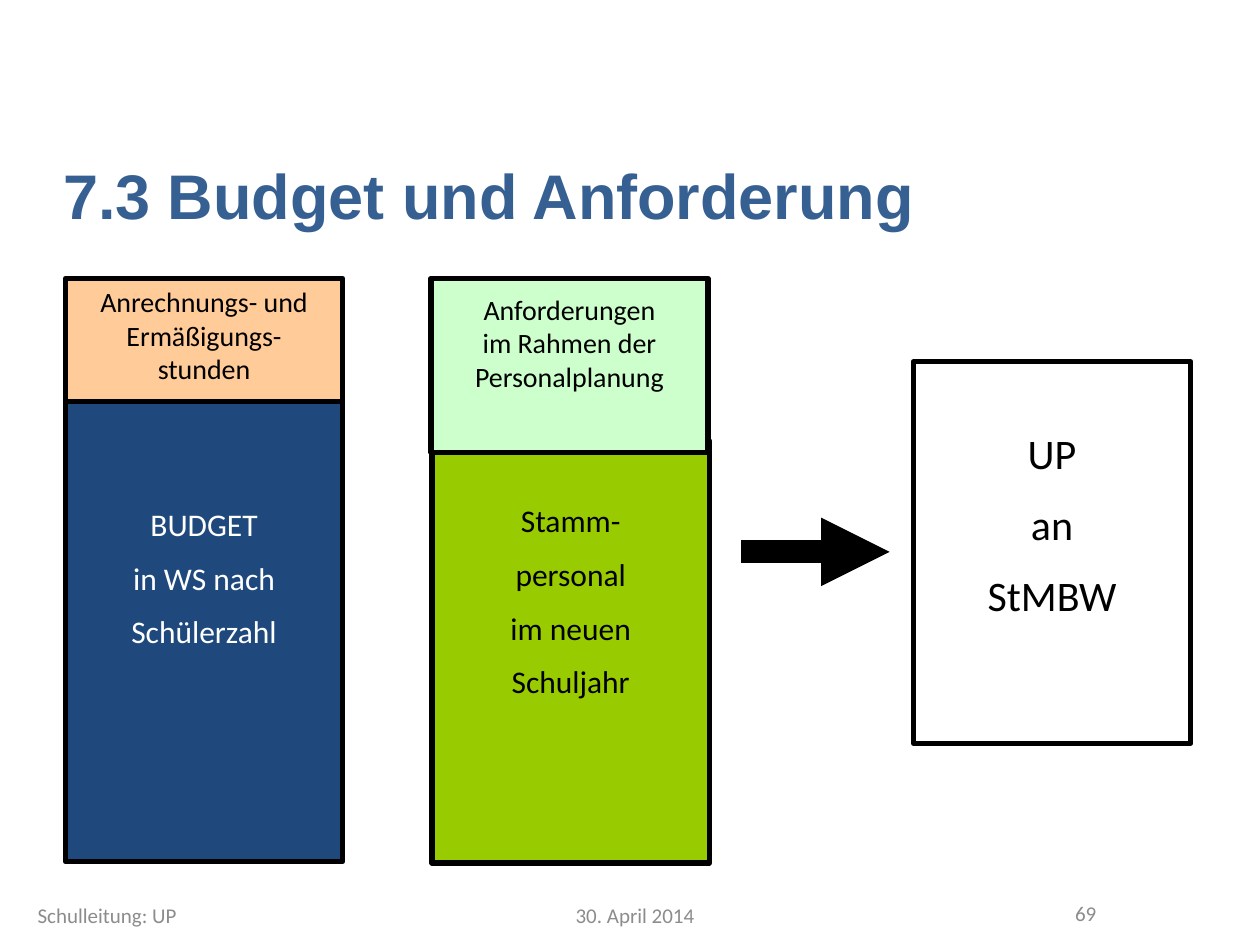
"""Build the slide on budget and staffing requests."""
from dataclasses import dataclass

from lxml import etree
from pptx import Presentation, util as u
from pptx.dml.color import RGBColor
from pptx.enum import shapes, text
from pptx.oxml.ns import qn

COLUMNS, ROWS = 100, 75
SLIDE_WIDTH, SLIDE_HEIGHT = u.Inches(10), u.Inches(7.5)
BLACK, WHITE, GREY, TITLE_BLUE = "000000", "FFFFFF", "8C8C8C", "376092"
BOX_WIDTH = 22


@dataclass
class Area:
    """A place on the slide in grid columns and rows."""
    column: float
    row: float
    width: float
    height: float


@dataclass
class Box:
    """A bordered block with centred lines."""
    area: Area
    fill: str
    lines: list[str]
    size: int
    top_inset: float
    space_before: int = 0
    color: str = BLACK


@dataclass
class Label:
    """One line of the footer."""
    area: Area
    wording: str
    alignment: text.PP_ALIGN


BOXES = [
    Box(Area(5.2, 31, BOX_WIDTH, 37.4), "1F497D",
        ["BUDGET", "in WS nach", "Schülerzahl"], 18, 0.91, 9, WHITE),
    Box(Area(5.2, 22.1, BOX_WIDTH, 9.8), "FFCC99",
        ["Anrechnungs- und", "Ermäßigungs-", "stunden"], 16, 0.05),
    Box(Area(34.3, 35, BOX_WIDTH, 33.5), "99CC00",
        ["Stamm-", "personal", "im neuen", "Schuljahr"], 18, 0.48, 9),
    Box(Area(34.2, 22.1, BOX_WIDTH, 13.8), "CCFFCC",
        ["Anforderungen", "im Rahmen der", "Personalplanung"], 16, 0.11),
    Box(Area(72.5, 28.7, BOX_WIDTH, 30.3), WHITE,
        ["UP", "an", "StMBW"], 24, 0.52, 12),
]
LABELS = [
    Label(Area(2, 71.4, 21.3, 2.4), "Schulleitung: UP", text.PP_ALIGN.LEFT),
    Label(Area(24, 71.4, 52.8, 2.4), "30. April 2014", text.PP_ALIGN.CENTER),
    Label(Area(77.1, 71.4, 10.9, 2.2), "69", text.PP_ALIGN.RIGHT),
]


def rgb(value: str) -> RGBColor:
    """Turn a hex string into a colour."""
    return RGBColor.from_string(value)


def across(columns: float) -> int:
    """Turn grid columns into a length."""
    return round(SLIDE_WIDTH * columns / COLUMNS)


def down(rows: float) -> int:
    """Turn grid rows into a length."""
    return round(SLIDE_HEIGHT * rows / ROWS)


def place(area: Area) -> tuple[int, int, int, int]:
    """Give left, top, width and height of an area."""
    return across(area.column), down(area.row), across(area.width), down(area.height)


def apply(target, values: dict) -> None:
    """Set each attribute of the target from the format values."""
    for name, value in values.items():
        setattr(target, name, value)


def write(shape, lines: list[str], size: int, color: str, alignment,
          anchor=text.MSO_ANCHOR.MIDDLE, top_inset: float = 0.05,
          space_before: int = 0, font: str = "Calibri", bold: bool = False) -> None:
    """Fill a shape with formatted paragraphs."""
    frame = shape.text_frame
    apply(frame, {"word_wrap": True, "auto_size": text.MSO_AUTO_SIZE.NONE,
                  "vertical_anchor": anchor, "margin_top": u.Inches(top_inset),
                  "margin_bottom": u.Inches(0.05)})
    frame.text = "\n".join(lines)
    for index, paragraph in enumerate(frame.paragraphs):
        apply(paragraph, {"alignment": alignment,
                          "space_before": u.Pt(space_before if index else 0)})
        apply(paragraph.font, {"name": font, "size": u.Pt(size), "bold": bold})
        paragraph.font.color.rgb = rgb(color)


def draw_box(slide, box: Box) -> None:
    """Draw one bordered block."""
    shape = slide.shapes.add_shape(shapes.MSO_SHAPE.RECTANGLE, *place(box.area))
    shape.shadow.inherit = False
    shape.fill.solid()
    shape.fill.fore_color.rgb = rgb(box.fill)
    shape.line.color.rgb = rgb(BLACK)
    shape.line.width = u.Pt(3)
    write(shape, box.lines, box.size, box.color, text.PP_ALIGN.CENTER,
          text.MSO_ANCHOR.TOP, box.top_inset, box.space_before)


def draw_arrow(slide, start: float, end: float, row: float) -> None:
    """Draw the thick arrow towards the last block."""
    arrow = slide.shapes.add_connector(
        shapes.MSO_CONNECTOR.STRAIGHT, across(start), down(row), across(end), down(row))
    arrow.line.color.rgb = rgb(BLACK)
    arrow.line.width = u.Pt(13)
    etree.SubElement(arrow.line._get_or_add_ln(), qn("a:tailEnd"), type="triangle")
    etree.SubElement(arrow._element.spPr, qn("a:effectLst"))


def draw_label(slide, label: Label) -> None:
    """Draw one footer line."""
    shape = slide.shapes.add_textbox(*place(label.area))
    write(shape, [label.wording], 12, GREY, label.alignment)


def main() -> None:
    """Build and save the presentation."""
    presentation = Presentation()
    apply(presentation, {"slide_width": SLIDE_WIDTH, "slide_height": SLIDE_HEIGHT})
    slide = presentation.slides.add_slide(presentation.slide_layouts[5])
    title = slide.shapes.title
    apply(title, dict(zip(("left", "top", "width", "height"),
                          place(Area(4, 11.5, 86.1, 7.9)))))
    write(title, ["7.3 Budget und Anforderung"], 36, TITLE_BLUE,
          text.PP_ALIGN.LEFT, font="Arial", bold=True)
    for box in BOXES:
        draw_box(slide, box)
    draw_arrow(slide, 58.8, 70.6, 43.8)
    for label in LABELS:
        draw_label(slide, label)
    presentation.save("out.pptx")


if __name__ == "__main__":
    main()
